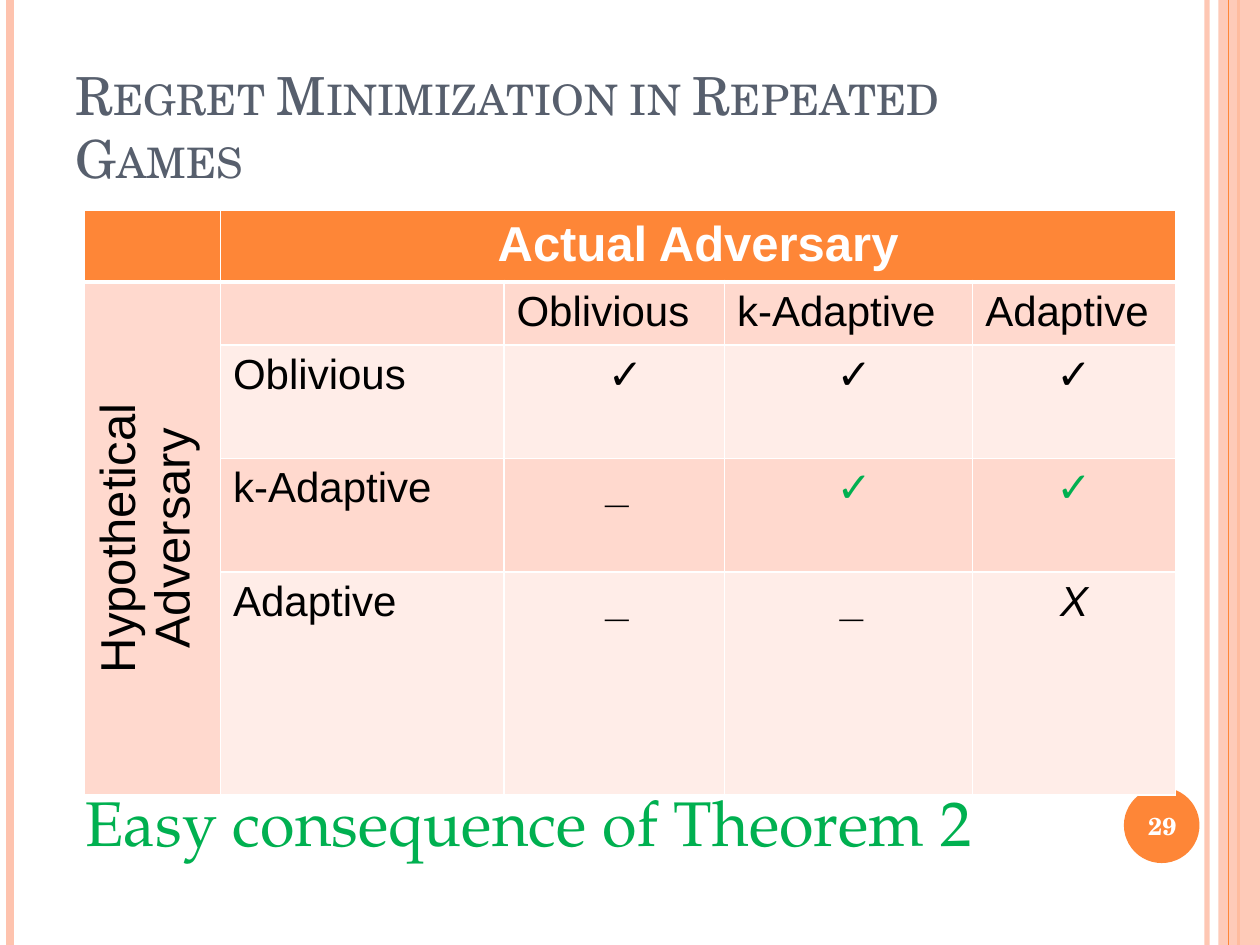
from dataclasses import dataclass

import pptx
import pptx.dml.color
import pptx.enum.shapes
import pptx.enum.text
import pptx.oxml.ns
import pptx.util
from lxml import etree

WIDTH, HEIGHT = 10, 7.5
ORANGE, PEACH, WHITE, BLACK, GREEN = "FE8637", "FEC3AE", "FFFFFF", "000000", "00B050"
BANDS = ("FFD9CE", "FFEDE8")
COLUMNS = (1.08, 2.25, 1.75, 1.97, 1.61)
ROWS = (0.56, 0.5, 0.9, 0.9, 1.77)
ADVERSARIES = ("Oblivious", "k-Adaptive", "Adaptive")
ALIGN = pptx.enum.text.PP_ALIGN
ANCHOR = pptx.enum.text.MSO_ANCHOR


@dataclass
class Stripe:
    """A full-height vertical rule at a share of the slide's width."""
    share: float
    color: str
    points: float
    opacity: int = 100


@dataclass
class Verdict:
    """A result in the adversary grid, nudged right by an extra left margin."""
    text: str
    nudge: float = 0
    color: str = BLACK


@dataclass
class Style:
    """The look of a run of text."""
    font: str
    size: float
    color: str
    bold: bool = False
    italic: bool = False


STRIPES = (
    Stripe(0.958, PEACH, 3, 93),
    Stripe(0.008, PEACH, 4.5),
    Stripe(0.983, ORANGE, 1.5),
)
VERDICTS = (
    (Verdict("✓", 0.18), Verdict("✓", 0.09), Verdict("✓")),
    (Verdict("_", 0.09), Verdict("✓", 0.09, GREEN), Verdict("✓", 0, GREEN)),
    (Verdict("_", 0.09), Verdict("_", 0.09), Verdict("X")),
)


def rgb(color: str):
    """Turn a hex string into a colour."""
    return pptx.dml.color.RGBColor.from_string(color)


def box(left: float, top: float, width: float, height: float) -> list:
    """Turn a box in inches into lengths."""
    return [pptx.util.Inches(value) for value in (left, top, width, height)]


def fade(properties, opacity: int) -> None:
    """Give the first solid colour below an element its opacity."""
    color = next(properties.iter(pptx.oxml.ns.qn("a:srgbClr")))
    etree.SubElement(color, pptx.oxml.ns.qn("a:alpha")).set("val", str(opacity * 1000))


def write(frame, text: str, style: Style, align=ALIGN.LEFT) -> None:
    """Set one formatted paragraph."""
    frame.text = text
    paragraph = frame.paragraphs[0]
    paragraph.alignment = align
    for run in paragraph.runs:
        run.font.name = style.font
        run.font.size = pptx.util.Pt(style.size)
        run.font.bold = style.bold
        run.font.italic = style.italic
        run.font.color.rgb = rgb(style.color)


def draw_stripe(slide, stripe: Stripe) -> None:
    """Draw one vertical rule."""
    x = pptx.util.Inches(stripe.share * WIDTH)
    rule = slide.shapes.add_connector(
        pptx.enum.shapes.MSO_CONNECTOR.STRAIGHT, x, 0, x, pptx.util.Inches(HEIGHT))
    rule.line.color.rgb = rgb(stripe.color)
    rule.line.width = pptx.util.Pt(stripe.points)
    properties = rule._element.spPr
    etree.SubElement(properties, pptx.oxml.ns.qn("a:effectLst"))
    if stripe.opacity < 100:
        fade(properties, stripe.opacity)


def draw_plain(slide, kind, area: tuple, color: str, opacity: int = 100) -> None:
    """Draw a filled shape without outline."""
    shape = slide.shapes.add_shape(kind, *box(*area))
    shape.shadow.inherit = False
    shape.fill.solid()
    shape.fill.fore_color.rgb = rgb(color)
    shape.line.fill.background()
    if opacity < 100:
        fade(shape._element.spPr, opacity)


def draw_text(slide, area: tuple, text: str, style: Style,
              align=ALIGN.LEFT, anchor=ANCHOR.TOP) -> None:
    """Draw a wrapping text box."""
    frame = slide.shapes.add_textbox(*box(*area)).text_frame
    frame.word_wrap = True
    frame.vertical_anchor = anchor
    write(frame, text, style, align)


def dress_cell(cell, fill: str, bottom: float) -> None:
    """Fill a cell and give it white borders."""
    properties = cell._tc.get_or_add_tcPr()
    for side, points in (("L", 1), ("R", 1), ("T", 1), ("B", bottom)):
        border = etree.SubElement(properties, pptx.oxml.ns.qn(f"a:ln{side}"))
        border.set("w", str(pptx.util.Pt(points)))
        paint = etree.SubElement(border, pptx.oxml.ns.qn("a:solidFill"))
        etree.SubElement(paint, pptx.oxml.ns.qn("a:srgbClr")).set("val", WHITE)
    cell.fill.solid()
    cell.fill.fore_color.rgb = rgb(fill)


def draw_adversary_table(slide) -> None:
    """Draw the grid of hypothetical against actual adversaries."""
    table = slide.shapes.add_table(
        len(ROWS), len(COLUMNS), *box(0.67, 1.67, sum(COLUMNS), sum(ROWS))).table
    for column, width in zip(table.columns, COLUMNS):
        column.width = pptx.util.Inches(width)
    for index, (row, height) in enumerate(zip(table.rows, ROWS)):
        row.height = pptx.util.Inches(height)
        for cell in row.cells:
            dress_cell(cell, BANDS[(index - 1) % 2] if index else ORANGE, 1 if index else 3)

    table.cell(0, 1).merge(table.cell(0, 4))
    table.cell(1, 0).merge(table.cell(4, 0))
    write(table.cell(0, 1).text_frame, "Actual Adversary",
          Style("Arial", 28, WHITE, bold=True), ALIGN.CENTER)
    hypothetical = table.cell(1, 0)
    write(hypothetical.text_frame, "Hypothetical Adversary",
          Style("Arial", 28, BLACK), ALIGN.CENTER)
    hypothetical._tc.get_or_add_tcPr().set("vert", "vert270")

    label = Style("Arial", 24, BLACK)
    for index, (adversary, verdicts) in enumerate(zip(ADVERSARIES, VERDICTS), start=2):
        write(table.cell(1, index).text_frame, adversary, label)
        write(table.cell(index, 1).text_frame, adversary, label)
        for column, verdict in enumerate(verdicts, start=2):
            cell = table.cell(index, column)
            cell.margin_left = pptx.util.Inches(0.1 + verdict.nudge)
            write(cell.text_frame, verdict.text,
                  Style("Arial", 24, verdict.color, italic=True), ALIGN.CENTER)


def draw_title(slide) -> None:
    """Place and format the title in small capitals."""
    title = slide.shapes.title
    title.left, title.top, title.width, title.height = box(0.5, 0.3, 8.17, 1.25)
    frame = title.text_frame
    frame.word_wrap = True
    frame.auto_size = pptx.enum.text.MSO_AUTO_SIZE.NONE
    frame.vertical_anchor = ANCHOR.BOTTOM
    write(frame, "Regret Minimization in Repeated Games",
          Style("TeX Gyre Schola", 30, "575F6D"))
    frame.paragraphs[0].runs[0].font._element.set("cap", "small")


def main() -> None:
    """Build and save the slide."""
    deck = pptx.Presentation()
    deck.slide_width = pptx.util.Inches(WIDTH)
    deck.slide_height = pptx.util.Inches(HEIGHT)
    slide = deck.slides.add_slide(deck.slide_layouts[5])
    shapes = pptx.enum.shapes.MSO_SHAPE
    for stripe in STRIPES:
        draw_stripe(slide, stripe)
    draw_plain(slide, shapes.RECTANGLE, (9.67, 0, 0.33, HEIGHT), PEACH, 87)
    draw_stripe(slide, Stripe(0.975, ORANGE, 0.75))
    draw_plain(slide, shapes.OVAL, (8.92, 6.25, 0.6, 0.6), ORANGE)
    draw_title(slide)
    draw_text(slide, (8.89, 6.27, 0.67, 0.57), "29",
              Style("TeX Gyre Schola", 14, WHITE, bold=True), ALIGN.CENTER, ANCHOR.MIDDLE)
    draw_text(slide, (0.58, 6.17, 8.67, 0.71), "Easy consequence of Theorem 2",
              Style("TeX Gyre Pagella", 36, GREEN))
    draw_adversary_table(slide)
    deck.save("out.pptx")


if __name__ == "__main__":
    main()
